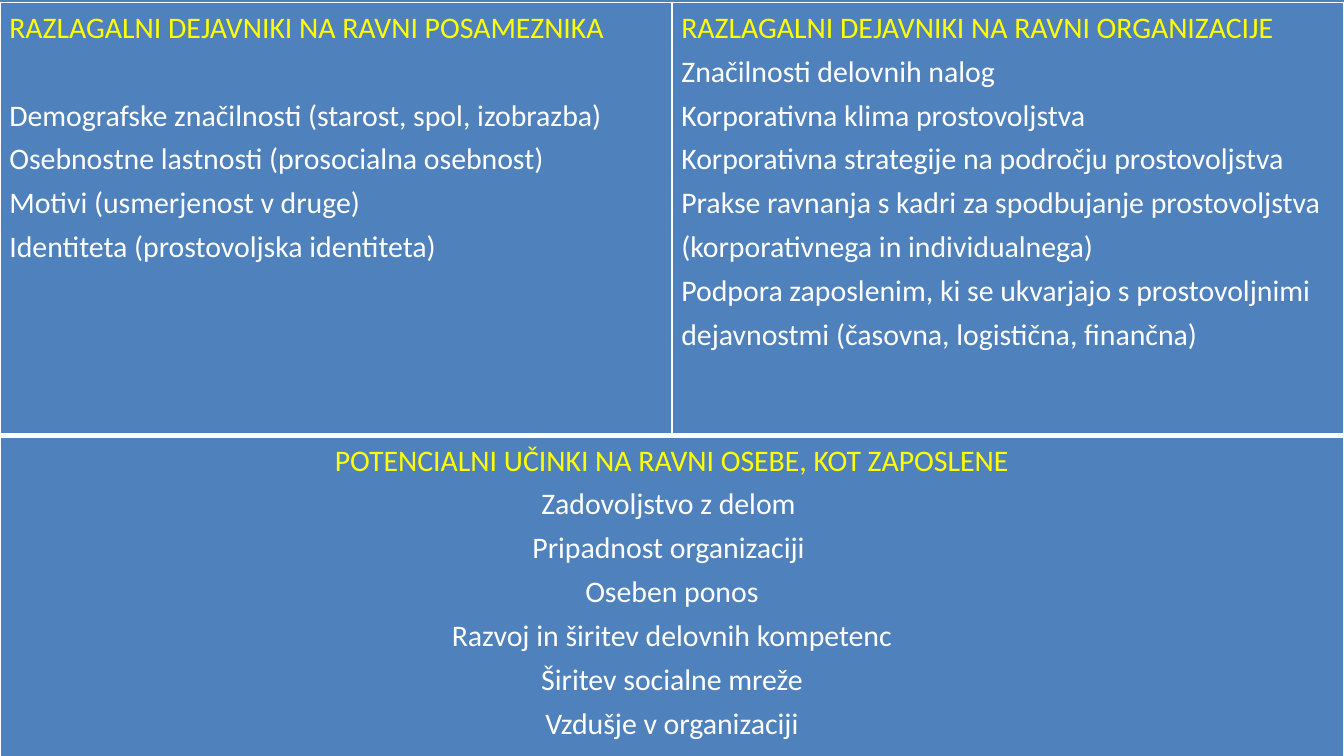
from lxml import etree
from pptx import Presentation
from pptx.dml.color import RGBColor
from pptx.enum.text import PP_ALIGN
from pptx.oxml.ns import qn
from pptx.util import Inches, Pt

BLUE, WHITE, YELLOW = "4F81BD", "FFFFFF", "FFFF00"
FONT, SIZE, LINE_SPACING = "Calibri", 16, 1.2

INDIVIDUAL = [
    "RAZLAGALNI DEJAVNIKI NA RAVNI POSAMEZNIKA",
    "Demografske značilnosti (starost, spol, izobrazba)",
    "Osebnostne lastnosti (prosocialna osebnost)",
    "Motivi (usmerjenost v druge)",
    "Identiteta (prostovoljska identiteta)",
]
ORGANIZATION = [
    "RAZLAGALNI DEJAVNIKI NA RAVNI ORGANIZACIJE",
    "Značilnosti delovnih nalog",
    "Korporativna klima prostovoljstva",
    "Korporativna strategije na področju prostovoljstva",
    "Prakse ravnanja s kadri za spodbujanje prostovoljstva "
    "(korporativnega in individualnega)",
    "Podpora zaposlenim, ki se ukvarjajo s prostovoljnimi "
    "dejavnostmi (časovna, logistična, finančna)",
]
EFFECTS = [
    "POTENCIALNI UČINKI NA RAVNI OSEBE, KOT ZAPOSLENE",
    "Zadovoljstvo z delom ",
    "Pripadnost organizaciji ",
    "Oseben ponos",
    "Razvoj in širitev delovnih kompetenc",
    "Širitev socialne mreže",
    "Vzdušje v organizaciji",
]


def paint(fill, color):
    fill.solid()
    fill.fore_color.rgb = RGBColor.from_string(color)


def set_borders(cell, top=1, bottom=1):
    """White cell borders, widths in points; they must precede the fill."""
    widths = {"a:lnL": 1, "a:lnR": 1, "a:lnT": top, "a:lnB": bottom}
    properties = cell._tc.get_or_add_tcPr()
    for index, (tag, width) in enumerate(widths.items()):
        line = etree.Element(qn(tag), w=str(Pt(width)))
        solid = etree.SubElement(line, qn("a:solidFill"))
        etree.SubElement(solid, qn("a:srgbClr"), val=WHITE)
        properties.insert(index, line)


def fill_cell(cell, lines, heading_align, item_align, heading_gap=0):
    """Yellow heading followed by white items."""
    paint(cell.fill, BLUE)
    cell.margin_left = cell.margin_right = Inches(0.07)
    cell.margin_top = cell.margin_bottom = 0
    cell.text_frame.text = "\n".join(lines)
    for index, paragraph in enumerate(cell.text_frame.paragraphs):
        heading = index == 0
        paragraph.alignment = heading_align if heading else item_align
        paragraph.line_spacing = LINE_SPACING
        paragraph.space_after = Pt(heading_gap if heading else 0)
        for run in paragraph.runs:
            run.font.name = FONT
            run.font.size = Pt(SIZE)
            run.font.bold = False
            run.font.color.rgb = RGBColor.from_string(YELLOW if heading else WHITE)


def add_factors_table(slide, left, top, width, row_heights):
    table = slide.shapes.add_table(
        2, 2, Inches(left), Inches(top), Inches(width), Inches(sum(row_heights))
    ).table
    table.first_row = table.horz_banding = False
    for row, height in zip(table.rows, row_heights):
        row.height = Inches(height)

    # Explanatory factors side by side
    individual, organization = table.cell(0, 0), table.cell(0, 1)
    fill_cell(individual, INDIVIDUAL, PP_ALIGN.JUSTIFY, PP_ALIGN.LEFT, heading_gap=23.5)
    fill_cell(organization, ORGANIZATION, PP_ALIGN.JUSTIFY, PP_ALIGN.LEFT)

    # Effects across both columns
    effects = table.cell(1, 0)
    effects.merge(table.cell(1, 1))
    fill_cell(effects, EFFECTS, PP_ALIGN.CENTER, PP_ALIGN.CENTER)

    # Thick rule between the two rows
    for column in range(2):
        set_borders(table.cell(0, column), bottom=3)
        set_borders(table.cell(1, column), top=3)


def main():
    presentation = Presentation()
    # Widescreen, 16:9
    presentation.slide_width = Inches(10)
    presentation.slide_height = Inches(10) * 9 // 16
    slide = presentation.slides.add_slide(presentation.slide_layouts[6])
    paint(slide.background.fill, BLUE)
    add_factors_table(slide, 0, 0.02, 10, [3.22, 2.39])
    presentation.save("out.pptx")


if __name__ == "__main__":
    main()
